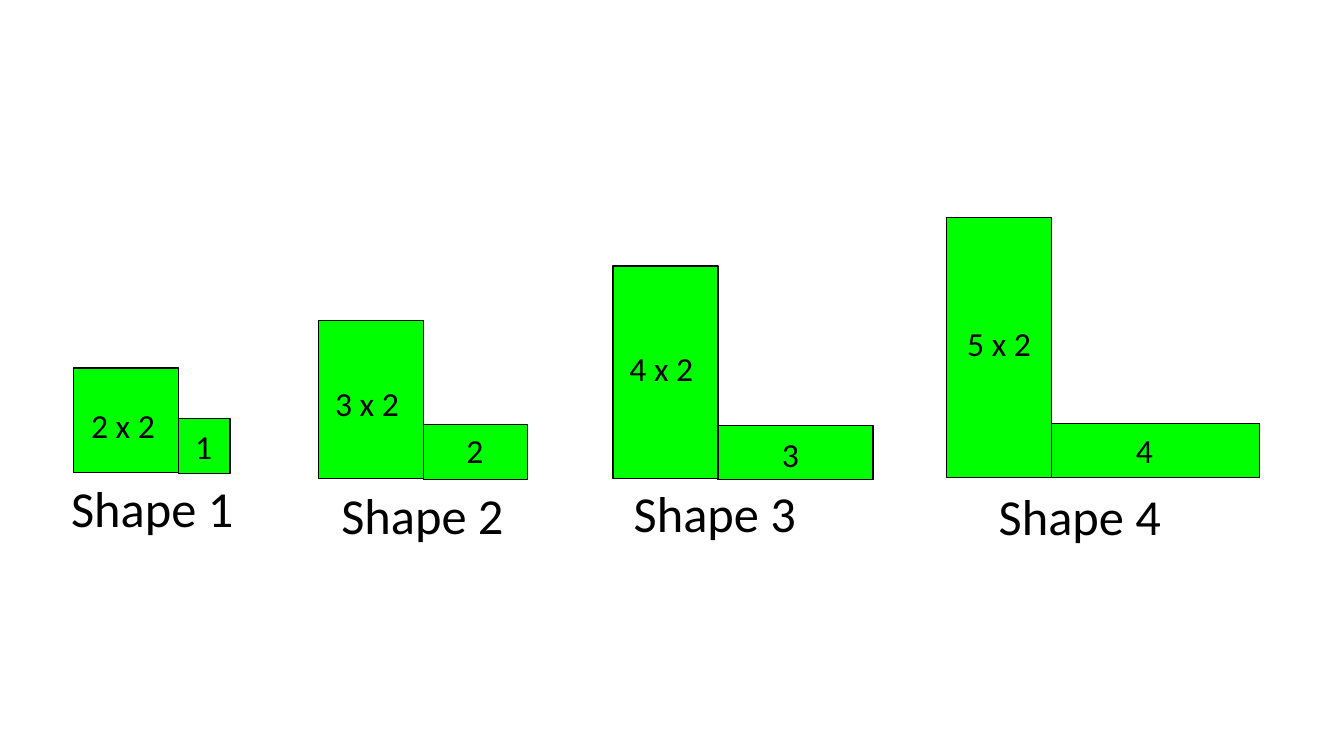
import pptx
import pptx.dml.color
import pptx.enum.shapes
import pptx.enum.text
import pptx.util

COLORS = {"tile": "00FF00", "ink": "000000"}
TILE_FONT = {"name": "Calibri", "size": pptx.util.Pt(24)}
NAME_FONT = {"name": "Calibri", "size": pptx.util.Pt(36)}
PX = 9144  # 100 px to the inch

COLUMN_W = 104
LABEL_W, LABEL_H = 90, 50
NAME_W, NAME_H = 302, 59

# column left, column top, column height, row top, row width, row height,
# column label (left, top), row label (left, top, width), name (left, top)
FIGURES = [
    (73, 365, 104, 415, 51, 55, (77, 397), (181, 418, 42), (0, 468)),
    (316, 318, 157, 421, 103, 55, (319, 375), (426, 422, LABEL_W), (268, 475)),
    (608, 264, 211, 422, 154, 54, (611, 340), (739, 426, LABEL_W), (558, 473)),
    (939, 216, 258, 420, 206, 54, (946, 315), (1090, 422, LABEL_W), (920, 476)),
]


class Canvas:
    def __init__(self, slide):
        self.slide = slide

    def color(self, name):
        return pptx.dml.color.RGBColor.from_string(COLORS[name])

    def rect(self, *box):
        sp = self.slide.shapes.add_shape(
            pptx.enum.shapes.MSO_SHAPE.RECTANGLE, *(v * PX for v in box))
        sp.shadow.inherit = False
        sp.fill.solid()
        sp.fill.fore_color.rgb = self.color("tile")
        sp.line.color.rgb = self.color("ink")
        sp.line.width = pptx.util.Pt(1)

    def text(self, text, font, *box):
        sp = self.slide.shapes.add_textbox(*(v * PX for v in box))
        tf = sp.text_frame
        tf.word_wrap = True
        tf.auto_size = pptx.enum.text.MSO_AUTO_SIZE.SHAPE_TO_FIT_TEXT
        p = tf.paragraphs[0]
        p.alignment = pptx.enum.text.PP_ALIGN.CENTER
        r = p.add_run()
        r.text = text
        for key, value in font.items():
            setattr(r.font, key, value)
        r.font.color.rgb = self.color("ink")


def main():
    prs = pptx.Presentation()
    prs.slide_width, prs.slide_height = 1333 * PX, 750 * PX
    canvas = Canvas(prs.slides.add_slide(prs.slide_layouts[6]))

    for n, figure in enumerate(FIGURES, 1):
        left, top, height, row_top, row_w, row_h, column_at, row_at, name_at = figure
        canvas.rect(left, top, COLUMN_W, height)
        canvas.rect(left + COLUMN_W, row_top, row_w, row_h)
        canvas.text(f"{n + 1} x 2", TILE_FONT, *column_at, LABEL_W, LABEL_H)
        canvas.text(str(n), TILE_FONT, *row_at, LABEL_H)
        canvas.text(f"Shape {n}", NAME_FONT, *name_at, NAME_W, NAME_H)

    prs.save("out.pptx")


if __name__ == "__main__":
    main()
